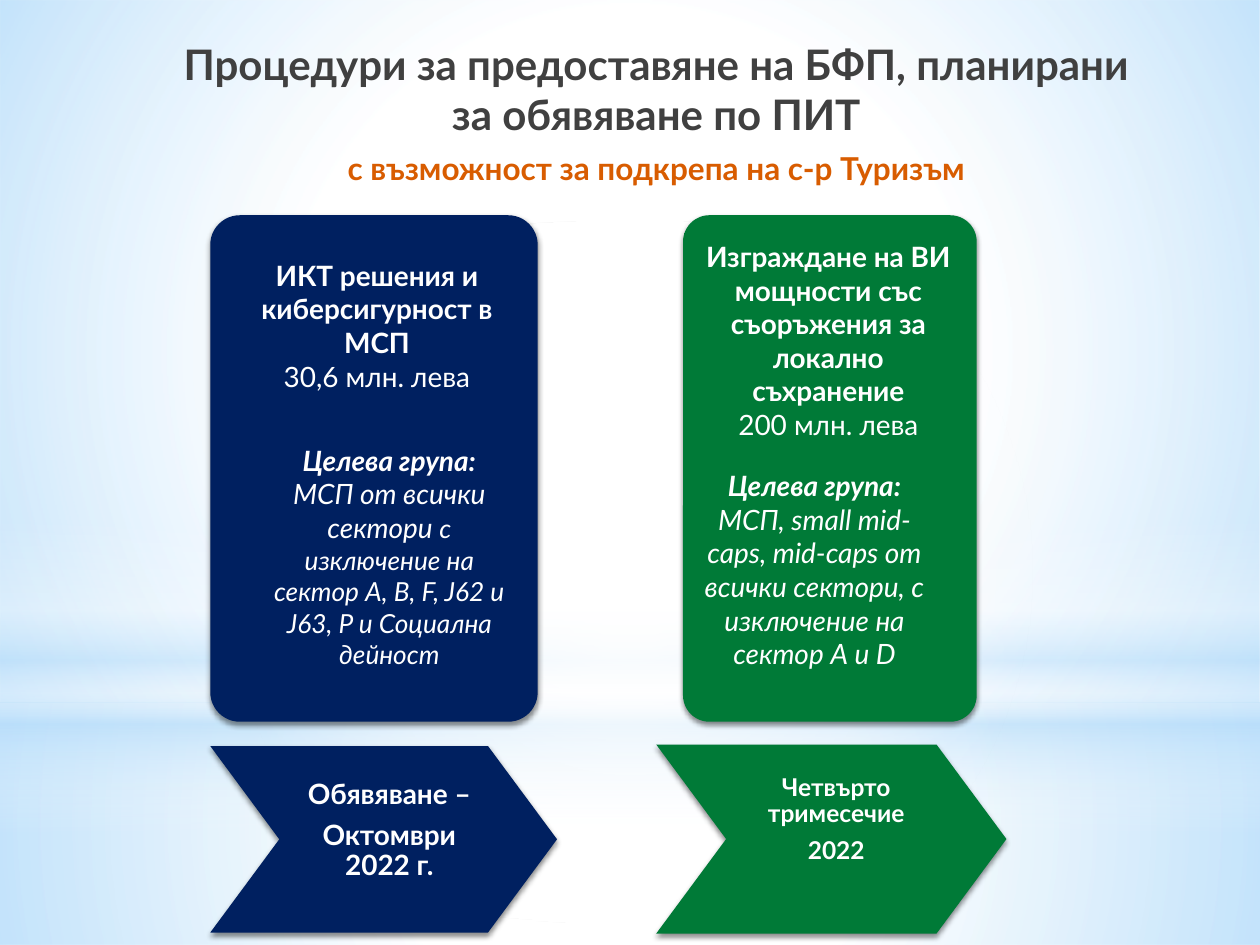
from lxml.etree import SubElement
from pptx import Presentation
from pptx.dml.color import RGBColor
from pptx.enum.shapes import MSO_SHAPE
from pptx.enum.text import MSO_ANCHOR, PP_ALIGN
from pptx.oxml import parse_xml
from pptx.oxml.ns import nsdecls, qn
from pptx.util import Cm, Pt

COLORS = {
    "white": "FFFFFF",
    "sky": "B4DCFA",
    "title": "404040",
    "accent": "D85C00",
    "navy": "002060",
    "green": "007A37",
    "shadow": "000000",
}
FONT = "Lato"
RADIAL = (
    '<a:path path="circle"><a:fillToRect l="50000" t="50000" r="50000" b="50000"/></a:path>'
)
LINEAR = '<a:lin ang="5400000" scaled="0"/>'


def add_shape(page, kind, box, color):
    shape = page.shapes.add_shape(kind, *(Cm(length) for length in box))
    shape.shadow.inherit = False
    shape.line.fill.background()
    shape.fill.solid()
    shape.fill.fore_color.rgb = RGBColor.from_string(COLORS[color])
    return shape


def add_gradient(shape, stops, direction):
    marks = "".join(
        f'<a:gs pos="{position * 1000}"><a:srgbClr val="{COLORS[color]}">'
        f'<a:alpha val="{opacity * 1000}"/></a:srgbClr></a:gs>'
        for position, color, opacity in stops
    )
    properties = shape.element.spPr
    gradient = parse_xml(
        f'<a:gradFill {nsdecls("a")} rotWithShape="1"><a:gsLst>{marks}</a:gsLst>{direction}</a:gradFill>'
    )
    properties.replace(properties.find(qn("a:solidFill")), gradient)


def add_shadow(shape):
    effects = shape.element.spPr.find(qn("a:effectLst"))
    shadow = SubElement(
        effects, qn("a:outerShdw"), blurRad=str(Pt(3.1)), dist=str(Pt(1.8)), dir="5400000"
    )
    color = SubElement(shadow, qn("a:srgbClr"), val=COLORS["shadow"])
    SubElement(color, qn("a:alpha"), val="45000")


def set_frame(shape, insets=(0.25, 0.13, 0.25, 0.13)):
    frame = shape.text_frame
    frame.word_wrap = True
    frame.vertical_anchor = MSO_ANCHOR.TOP
    frame.margin_left, frame.margin_top, frame.margin_right, frame.margin_bottom = (
        Cm(inset) for inset in insets
    )
    return frame


def add_paragraphs(frame, paragraphs, color="white", line_spacing=None, after=0):
    for index, runs in enumerate(paragraphs):
        para = frame.paragraphs[0] if index == 0 else frame.add_paragraph()
        para.alignment = PP_ALIGN.CENTER
        para.space_after = Pt(after)
        if line_spacing:
            para.line_spacing = line_spacing
        for text, size, bold, italic in runs:
            span = para.add_run()
            span.text = text
            span.font.name = FONT
            span.font.size = Pt(size)
            span.font.bold = bold
            span.font.italic = italic
            span.font.color.rgb = RGBColor.from_string(COLORS[color])


def add_backdrop(page, box):
    left, top, width, height = box
    horizon = 14.17
    layers = [
        (MSO_SHAPE.RECTANGLE, horizon, height - horizon, RADIAL,
         [(0, "white", 91), (37, "white", 76), (100, "sky", 79)]),
        (MSO_SHAPE.RECTANGLE, 0, horizon, RADIAL,
         [(0, "white", 89), (48, "white", 62), (100, "sky", 79)]),
        (MSO_SHAPE.RECTANGLE, 10.46, 6.35, LINEAR,
         [(0, "white", 0), (29, "white", 30), (45, "sky", 40),
          (55, "white", 26), (65, "sky", 60), (100, "white", 0)]),
        (MSO_SHAPE.OVAL, 4.45, horizon, RADIAL,
         [(0, "white", 100), (56, "white", 0)]),
    ]
    for kind, offset, depth, direction, stops in layers:
        layer = add_shape(page, kind, (left, top + offset, width, depth), "white")
        add_gradient(layer, stops, direction)


def add_title(page, box):
    frame = set_frame(page.shapes.add_textbox(*(Cm(length) for length in box)))
    heading = "Процедури за предоставяне на БФП, планирани за обявяване по ПИТ"
    add_paragraphs(frame, [[(heading, 24, True, False)]], "title")
    para = frame.add_paragraph()
    para.alignment = PP_ALIGN.CENTER
    para.space_before = Pt(6)
    span = para.add_run()
    span.text = "с възможност за подкрепа на с-р Туризъм"
    span.font.name = FONT
    span.font.size = Pt(18)
    span.font.bold = True
    span.font.color.rgb = RGBColor.from_string(COLORS["accent"])


def add_card(page, box, color, sections):
    left, top, width, height = box
    card = add_shape(page, MSO_SHAPE.ROUNDED_RECTANGLE, box, color)
    card.adjustments[0] = 0.09
    add_shadow(card)
    for (x, y, section_width, section_height), paragraphs in sections:
        place = (left + x, top + y, section_width, section_height)
        section = add_shape(page, MSO_SHAPE.RECTANGLE, place, color)
        add_paragraphs(set_frame(section), paragraphs)


def add_date_arrow(page, box, color, insets, size, lines):
    arrow = add_shape(page, MSO_SHAPE.CHEVRON, box, color)
    arrow.adjustments[0] = 0.37
    add_shadow(arrow)
    paragraphs = [[(line, size, True, False)] for line in lines]
    add_paragraphs(set_frame(arrow, insets), paragraphs, line_spacing=0.9, after=6)


def main():
    deck = Presentation()
    deck.slide_width, deck.slide_height = Cm(25.4), Cm(19.05)
    page = deck.slides.add_slide(deck.slide_layouts[6])
    add_backdrop(page, (0, 0, 25.4, 19.05))
    add_title(page, (2.97, 0.64, 20.52, 1.78))

    target = [("Целева група:", 16, True, True)]
    add_card(page, (4.24, 4.34, 6.6, 10.21), "navy", [
        ((0.21, 0.74, 6.3, 3), [
            [("ИКТ решения и киберсигурност в МСП", 16, True, False)],
            [("30,6 млн. лева", 16, False, False)],
        ]),
        ((0.92, 4.47, 5.38, 4.88), [
            target,
            [("МСП от всички сектори ", 16, False, True),
             ("с изключение на сектор А, В, F, J62 и J63, P и Социална дейност", 15, False, True)],
        ]),
    ])
    add_card(page, (13.77, 4.34, 5.92, 10.21), "green", [
        ((0.02, 0.36, 5.82, 4.37), [
            [("Изграждане на ВИ мощности със съоръжения за локално съхранение", 16, True, False)],
            [("200 млн. лева", 16, False, False)],
        ]),
        ((0.02, 4.98, 5.26, 4.37), [
            target,
            [("МСП, small mid-caps, mid-caps от всички сектори, с изключение на сектор А и D",
              16, False, True)],
        ]),
    ])

    add_date_arrow(page, (4.24, 15.04, 6.99, 3.76), "navy", (0.46, 0.69, 0.23, 0.1), 16,
                   ["Обявяване –", "Октомври 2022 г."])
    add_date_arrow(page, (13.23, 15.01, 7.06, 3.81), "green", (0.6, 0.62, 0.4, 0.1), 14,
                   ["Четвърто тримесечие", "2022"])
    deck.save("out.pptx")


if __name__ == "__main__":
    main()
